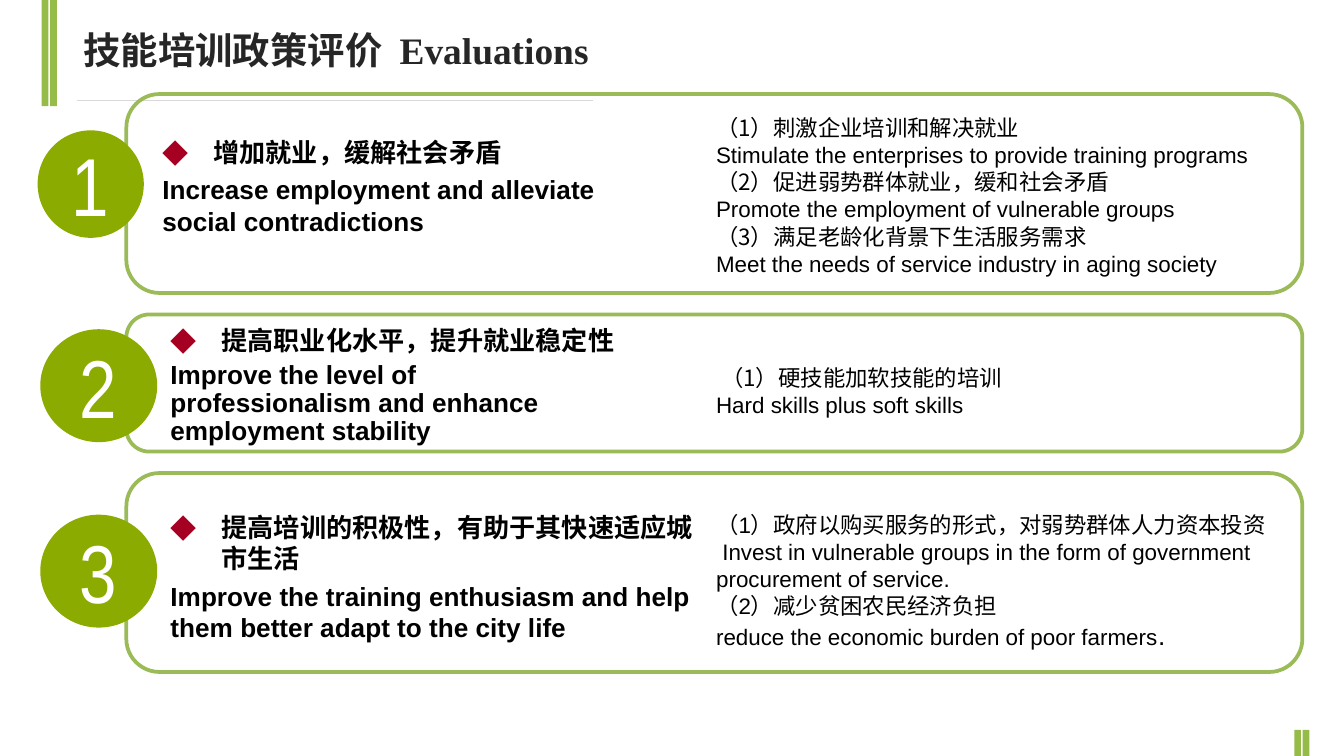
from dataclasses import dataclass

from lxml.etree import SubElement
from pptx import Presentation
from pptx.dml.color import RGBColor
from pptx.enum.shapes import MSO_CONNECTOR as Connector, MSO_SHAPE as Shape
from pptx.enum.text import MSO_ANCHOR as Anchor, MSO_AUTO_SIZE as AutoSize, PP_ALIGN as Align
from pptx.oxml.ns import qn
from pptx.util import Emu, Inches, Pt

COLORS = {
    "bar": "95BC49", "rule": "D9D9D9", "card": "9BBB59", "badge": "8BAB00",
    "title": "262626", "text": "000000", "bullet": "A50021", "white": "FFFFFF",
}
HAN, LATIN, TITLE_LATIN, NARROW = "Noto Sans CJK SC", "Arial", "Times New Roman", "Arial Narrow"

# The grid has square cells, a hundred to the slide's width.
CELL = Inches(0.1)
CARD_LEFT, CARD_WIDTH, CARD_TOP, CARD_GAP = 9.4, 87.5, 7, 1.6
POINTS_LEFT = 52.3


@dataclass
class Area:
    """Columns and rows of the grid."""
    left: float
    top: float
    width: float
    height: float

    def lengths(self) -> list[Emu]:
        return [Emu(round(cells * CELL))
                for cells in (self.left, self.top, self.width, self.height)]


@dataclass
class Card:
    height: float
    badge: Area
    heading_area: Area
    heading_line: float
    heading: str
    translation: str
    points_area: Area
    points: list[str]
    points_font: str = HAN


CARDS = [
    Card(14.8, Area(2.8, 9.7, 7.9, 8), Area(11.1, 9.6, 34.2, 9), 17,
         "增加就业，缓解社会矛盾",
         "Increase employment and alleviate social contradictions",
         Area(POINTS_LEFT, 8, 45.3, 13.1),
         ["（1）刺激企业培训和解决就业",
          "Stimulate the enterprises to provide training programs",
          "（2）促进弱势群体就业，缓和社会矛盾",
          "Promote the employment of vulnerable groups",
          "（3）满足老龄化背景下生活服务需求",
          "Meet the needs of service industry in aging society"]),
    Card(10.2, Area(3, 24.5, 8.7, 8.4), Area(11.7, 23.9, 35.7, 7.2), 15,
         "提高职业化水平，提升就业稳定性",
         "Improve the level of professionalism and enhance employment stability",
         Area(POINTS_LEFT, 26.6, 31.1, 4.5),
         [" （1）硬技能加软技能的培训", "Hard skills plus soft skills"]),
    Card(14.8, Area(3, 38.3, 8.7, 8.4), Area(11.7, 37.5, 42.2, 11.7), 17,
         "提高培训的积极性，有助于其快速适应城市生活",
         "Improve the training enthusiasm and help them better adapt to the city life",
         Area(POINTS_LEFT, 37.5, 43.8, 11.4),
         ["（1）政府以购买服务的形式，对弱势群体人力资本投资",
          " Invest in vulnerable groups in the form of government procurement of service.",
          "（2）减少贫困农民经济负担",
          "reduce the economic burden of poor farmers"],
         LATIN),
]


def color(name: str) -> RGBColor:
    return RGBColor.from_string(COLORS[name])


def set_font(font, size: float, name: str, fill: str, bold: bool = False) -> None:
    font.size, font.name, font.bold = Pt(size), name, bold
    font.color.rgb = color(fill)


def add_span(para, text: str, name: str):
    """Add a run whose Han characters keep the Han font."""
    span = para.add_run()
    span.text = text
    span.font.name = name
    SubElement(span.font._element, qn("a:ea"), typeface=HAN)
    return span


def add_shape(page, kind: Shape, area: Area, fill: str = "", line: str = ""):
    shape = page.shapes.add_shape(kind, *area.lengths())
    shape.shadow.inherit = False
    if fill:
        shape.fill.solid()
        shape.fill.fore_color.rgb = color(fill)
    else:
        shape.fill.background()
    if line:
        shape.line.color.rgb = color(line)
        shape.line.width = Pt(2)
    else:
        shape.line.fill.background()
    return shape


def add_text(page, area: Area, count: int) -> list:
    """Add a wrapping text box and return its empty paragraphs."""
    frame = page.shapes.add_textbox(*area.lengths()).text_frame
    frame.word_wrap = True
    return [frame.paragraphs[0]] + [frame.add_paragraph() for _ in range(count - 1)]


def add_diamond_bullet(para) -> None:
    props = para._p.get_or_add_pPr()
    indent = Inches(0.38)
    props.set("marL", str(indent))
    props.set("indent", str(-indent))
    SubElement(SubElement(props, qn("a:buClr")), qn("a:srgbClr"), val=COLORS["bullet"])
    SubElement(props, qn("a:buFont"), typeface=HAN)
    SubElement(props, qn("a:buChar"), char="◆")


def add_badge(page, area: Area, number: int) -> None:
    frame = add_shape(page, Shape.OVAL, area, fill="badge").text_frame
    frame.vertical_anchor = Anchor.MIDDLE
    para = frame.paragraphs[0]
    para.text = str(number)
    para.alignment = Align.CENTER
    set_font(para.font, 44, NARROW, "white")


def add_heading(page, card: Card) -> None:
    paras = add_text(page, card.heading_area, 2)
    for para, text, name in zip(paras, (card.heading, card.translation), (HAN, LATIN)):
        para.line_spacing = Pt(card.heading_line)
        para.space_before = Pt(3)
        set_font(para.font, 14, name, "text", bold=True)
        add_span(para, text, name)
    add_diamond_bullet(paras[0])


def add_points(page, card: Card):
    paras = add_text(page, card.points_area, len(card.points))
    for number, (para, text) in enumerate(zip(paras, card.points)):
        name = LATIN if number % 2 else card.points_font
        para.line_spacing = Pt(14.5)
        set_font(para.font, 12, name, "text")
        add_span(para, text, name)
    return paras[-1]


def add_frame(page) -> None:
    """Draw the paired corner bars and the rule under the title."""
    for left, top, height in ((3.1, 0, 7.9), (9.63 * 10, 54.3, 1.95)):
        for offset in (0, 0.63):
            add_shape(page, Shape.RECTANGLE, Area(left + offset, top, 0.5, height), fill="bar")
    row = Inches(0.75)
    rule = page.shapes.add_connector(Connector.STRAIGHT, Inches(0.57), row, Inches(4.41), row)
    rule.line.color.rgb = color("rule")
    rule.line.width = Pt(0.75)
    SubElement(rule._element.spPr, qn("a:effectLst"))


def fill_title(title) -> None:
    title.left, title.top, title.width, title.height = Area(5.2, 1.5, 42.3, 4.4).lengths()
    frame = title.text_frame
    frame.auto_size, frame.vertical_anchor = AutoSize.NONE, Anchor.TOP
    para = frame.paragraphs[0]
    para.alignment = Align.LEFT
    set_font(para.font, 20, NARROW, "title", bold=True)
    add_span(para, "技能培训政策评价  ", NARROW)
    add_span(para, "Evaluations", TITLE_LATIN)


def main() -> None:
    deck = Presentation()
    deck.slide_width = 100 * CELL
    deck.slide_height = deck.slide_width * 9 // 16
    page = deck.slides.add_slide(deck.slide_layouts[5])
    fill_title(page.shapes.title)
    add_frame(page)
    top = CARD_TOP
    for number, card in enumerate(CARDS, start=1):
        area = Area(CARD_LEFT, top, CARD_WIDTH, card.height)
        add_shape(page, Shape.ROUNDED_RECTANGLE, area, line="card")
        add_badge(page, card.badge, number)
        add_heading(page, card)
        last = add_points(page, card)
        top += card.height + CARD_GAP
    last.line_spacing = Pt(17)
    add_span(last, ".", LATIN).font.size = Pt(14)
    deck.save("out.pptx")


if __name__ == "__main__":
    main()
